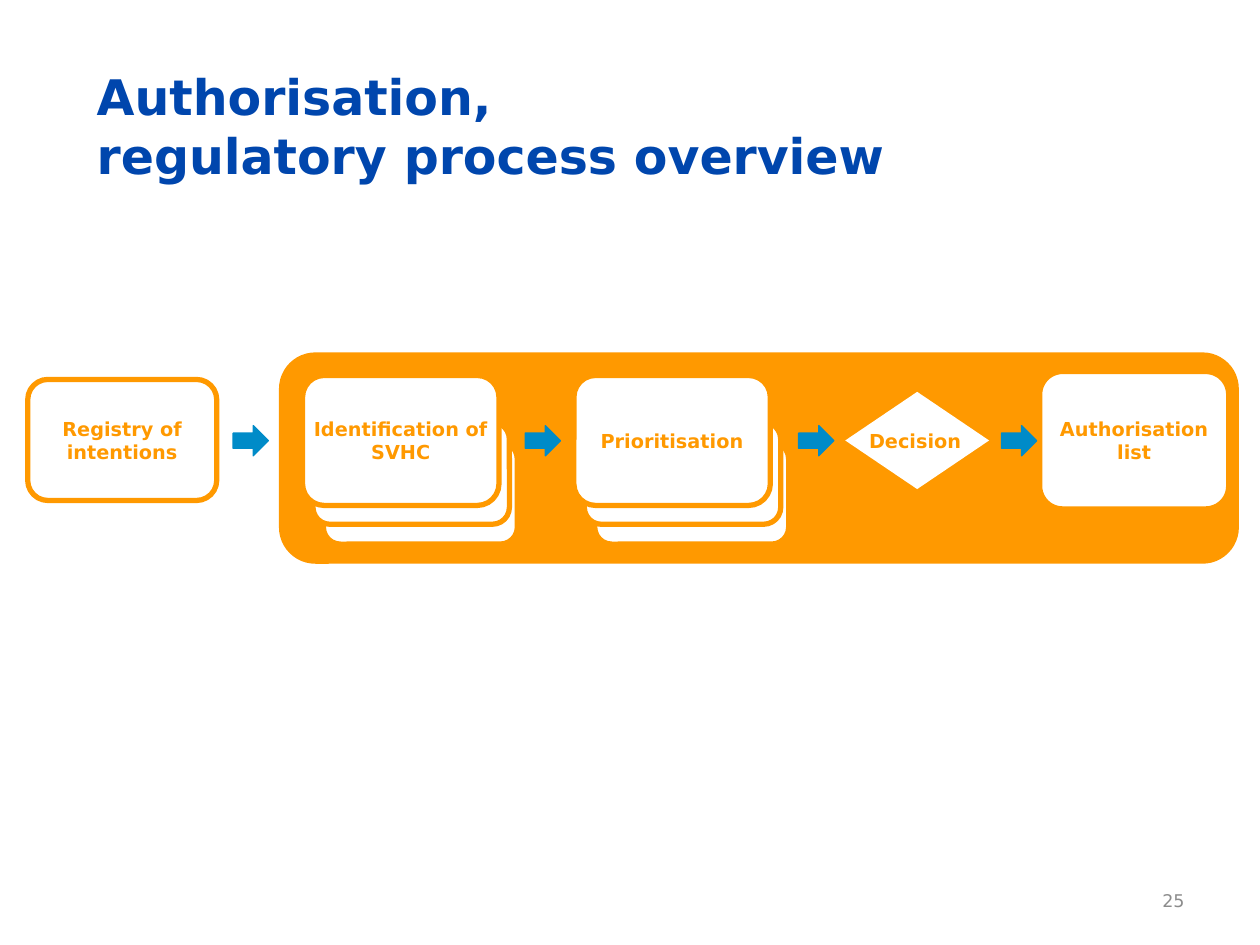
from pptx import Presentation
from pptx.dml.color import RGBColor
from pptx.enum.shapes import MSO_SHAPE as Shape
from pptx.enum.text import MSO_ANCHOR as Anchor, PP_ALIGN as Align
from pptx.util import Cm, Pt

FONT = "DejaVu Sans"
ORANGE, WHITE, BLUE, NAVY, GREY = "FF9900", "FFFFFF", "008BC8", "0046AD", "8C8C8C"

TITLE = "Authorisation,\vregulatory process overview"
PAGE_NUMBER = "25"

# Places are left, top, width, height in centimetres.
FRAME = (5.66, 7.14, 19.28, 4.19)
STEPS = [
    ("Registry of intentions", (0.56, 7.65, 3.81, 2.44)),
    ("Authorisation list", (20.96, 7.49, 3.81, 2.77)),
]
STACKS = [("Identification of SVHC", 6.1), ("Prioritisation", 11.57)]
# Sheets of a stack, back to front: shape, offset from the stack's left, top, width, height.
SHEETS = [
    (Shape.ROUNDED_RECTANGLE, 0.42, 8.91, 3.91, 2.06),
    (Shape.FLOWCHART_ALTERNATE_PROCESS, 0.21, 8.51, 3.96, 2.06),
    (Shape.ROUNDED_RECTANGLE, 0, 7.57, 3.96, 2.62),
]
DECISION = ("Decision", (17.04, 7.9, 2.9, 1.96), (16.89, 8.51, 3.12, 0.74))
ARROW_LEFTS = [4.7, 10.59, 16.1, 20.19]


def color(value):
    return RGBColor.from_string(value)


def lengths(place):
    return [Cm(value) for value in place]


def write(shape, text, size, ink, bold=False, align=Align.CENTER, inset=0.1):
    frame = shape.text_frame
    frame.word_wrap = True
    frame.vertical_anchor = Anchor.MIDDLE
    frame.margin_left = frame.margin_right = Cm(inset)
    frame.text = text
    for para in frame.paragraphs:
        para.alignment = align
        for span in para.runs:
            span.font.name, span.font.size = FONT, Pt(size)
            span.font.bold = bold
            span.font.color.rgb = color(ink)


def add_box(parent, kind, place, fill=WHITE, line=ORANGE, width=3):
    box = parent.shapes.add_shape(kind, *lengths(place))
    box.shadow.inherit = False
    box.fill.solid()
    box.fill.fore_color.rgb = color(fill)
    if line:
        box.line.color.rgb = color(line)
        box.line.width = Pt(width)
    else:
        box.line.fill.background()
    return box


def add_stack(parent, text, left):
    for kind, shift, top, width, height in SHEETS:
        sheet = add_box(parent, kind, (left + shift, top, width, height))
    write(sheet, text, 11, ORANGE, bold=True)


def main():
    deck = Presentation()
    deck.slide_width, deck.slide_height = Cm(25.4), Cm(19.05)
    page = deck.slides.add_slide(deck.slide_layouts[5])

    title = page.shapes.title
    title.left, title.top, title.width, title.height = lengths((1.7, 1.52, 21.59, 2.01))
    write(title, TITLE, 28, NAVY, bold=True, align=Align.LEFT, inset=0.25)

    number = page.shapes.add_textbox(*lengths((18.21, 17.65, 5.92, 1.02)))
    write(number, PAGE_NUMBER, 10, GREY, align=Align.RIGHT, inset=0.25)

    process = page.shapes.add_group_shape()
    add_box(process, Shape.FLOWCHART_ALTERNATE_PROCESS, FRAME, fill=ORANGE, width=2)
    for text, place in STEPS:
        step = add_box(process, Shape.ROUNDED_RECTANGLE, place)
        write(step, text, 11, ORANGE, bold=True)

    text, diamond_place, label_place = DECISION
    add_box(process, Shape.DIAMOND, diamond_place, line=None)
    label = process.shapes.add_textbox(*lengths(label_place))
    write(label, text, 11, ORANGE, bold=True)

    for text, left in STACKS:
        add_stack(process, text, left)
    for left in ARROW_LEFTS:
        add_box(process, Shape.RIGHT_ARROW, (left, 8.58, 0.71, 0.61), BLUE, BLUE, 0.75)

    deck.save("out.pptx")


if __name__ == "__main__":
    main()
